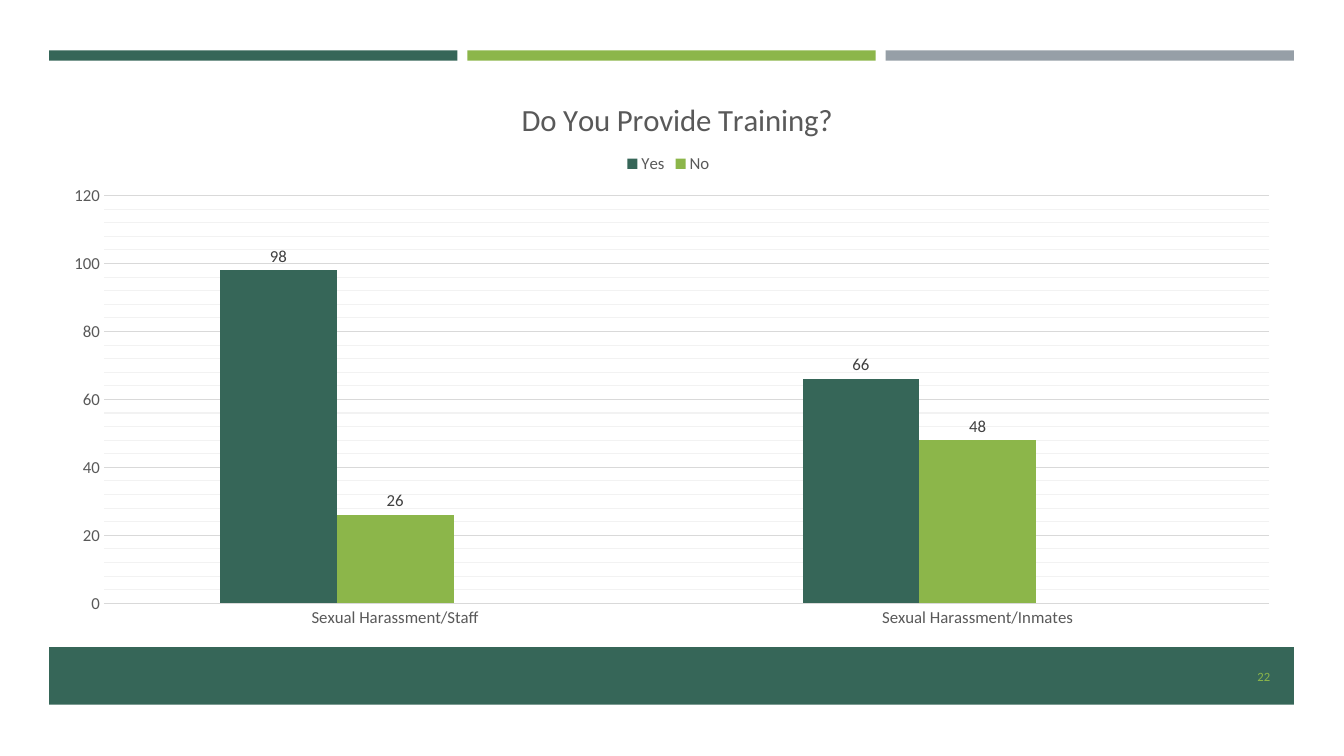
"""Build the training survey slide with its clustered column chart."""
import pptx
import pptx.chart.data
import pptx.dml.color
import pptx.enum.chart
import pptx.enum.shapes
import pptx.enum.text
import pptx.oxml
import pptx.oxml.ns
import pptx.util
from pptx.util import Cm, Pt

RGBColor = pptx.dml.color.RGBColor
PINE = RGBColor(0x36, 0x66, 0x58)
LIME = RGBColor(0x8C, 0xB6, 0x4A)
MINT = RGBColor(0x88, 0xD5, 0xA9)
STEEL = RGBColor(0x96, 0x9F, 0xA7)
TEXT = RGBColor(0x59, 0x59, 0x59)
DARK = RGBColor(0x40, 0x40, 0x40)
GRID = RGBColor(0xD9, 0xD9, 0xD9)
FAINT = RGBColor(0xF2, 0xF2, 0xF2)
FACE = "Calibri"
LEFT, WIDTH = 1.24, 31.37


def style(font, size, color):
    font.name, font.size, font.bold = FACE, Pt(size), False
    font.color.rgb = color


def place(item, after, target, **parts):
    for old in item.findall(pptx.oxml.ns.qn("c:layout")):
        item.remove(old)
    tags = "".join(f'<c:{key} val="{val}"/>' for key, val in parts.items())
    layout = pptx.oxml.parse_xml(
        f'<c:layout {pptx.oxml.ns.nsdecls("c")}><c:manualLayout>{target}'
        f'<c:xMode val="edge"/><c:yMode val="edge"/>{tags}</c:manualLayout></c:layout>')
    if after is None:
        item.insert(0, layout)
    else:
        after.addnext(layout)


deck = pptx.Presentation()
deck.slide_width, deck.slide_height = Cm(33.87), Cm(19.05)
slide = deck.slides.add_slide(deck.slide_layouts[6])

bars = [(LEFT + i * 10.54, 1.27, 10.29, 0.26, color)
        for i, color in enumerate((PINE, LIME, STEEL))]
bars.append((LEFT, 16.31, WIDTH, 1.45, PINE))
for x, y, wide, high, color in bars:
    bar = slide.shapes.add_shape(pptx.enum.shapes.MSO_SHAPE.RECTANGLE,
                                 Cm(x), Cm(y), Cm(wide), Cm(high))
    bar.shadow.inherit = False
    bar.fill.solid()
    bar.fill.fore_color.rgb = color
    bar.line.fill.background()

box = slide.shapes.add_textbox(Cm(29.34), Cm(16.54), Cm(2.92), Cm(1.02))
frame = box.text_frame
frame.word_wrap = True
frame.vertical_anchor = pptx.enum.text.MSO_ANCHOR.MIDDLE
frame.text = "22"
number = frame.paragraphs[0]
number.alignment = pptx.enum.text.PP_ALIGN.RIGHT
style(number.runs[0].font, 9, LIME)

data = pptx.chart.data.CategoryChartData()
data.categories = ["Sexual Harassment/Staff", "Sexual Harassment/Inmates"]
data.add_series("Yes", (98, 66))
data.add_series("No", (26, 48))
data.add_series("Series 3", (None, None))
chart = slide.shapes.add_chart(
    pptx.enum.chart.XL_CHART_TYPE.COLUMN_CLUSTERED,
    Cm(LEFT), Cm(1.68), Cm(WIDTH), Cm(14.45), data).chart
style(chart.font, 12, TEXT)

chart.has_title = True
title = chart.chart_title
title.text_frame.text = "Do You Provide Training?"
style(title.text_frame.paragraphs[0].runs[0].font, 22, TEXT)
place(title._element, title._element.find(pptx.oxml.ns.qn("c:tx")), "", x=0.375, y=0.045)

chart.has_legend = True
legend = chart.legend
legend.position = pptx.enum.chart.XL_LEGEND_POSITION.TOP
legend.include_in_layout = False
style(legend.font, 12, TEXT)
entry = pptx.oxml.parse_xml(
    f'<c:legendEntry {pptx.oxml.ns.nsdecls("c")}><c:idx val="2"/>'
    '<c:delete val="1"/></c:legendEntry>')
legend._element.find(pptx.oxml.ns.qn("c:legendPos")).addnext(entry)
place(legend._element, entry, "", x=0.46, y=0.145)

plot = chart.plots[0]
plot.gap_width, plot.overlap = 199, 0
plot.vary_by_categories = False
for series, color in zip(plot.series, (PINE, LIME, MINT)):
    series.format.fill.solid()
    series.format.fill.fore_color.rgb = color
    labels = series.data_labels
    labels.show_value = True
    labels.position = pptx.enum.chart.XL_LABEL_POSITION.OUTSIDE_END
    style(labels.font, 12, DARK)

cats, vals = chart.category_axis, chart.value_axis
for axis in (cats, vals):
    axis.major_tick_mark = axis.minor_tick_mark = pptx.enum.chart.XL_TICK_MARK.NONE
    style(axis.tick_labels.font, 12, TEXT)
vals.minimum_scale, vals.maximum_scale = 0, 120
vals.major_unit, vals.minor_unit = 20, 4
vals.has_major_gridlines = vals.has_minor_gridlines = True
vals.format.line.fill.background()
for line in (cats.format.line, vals.major_gridlines.format.line):
    line.color.rgb = GRID
    line.width = Pt(0.75)
minor = vals._element.find(pptx.oxml.ns.qn("c:minorGridlines"))
minor.append(pptx.oxml.parse_xml(
    f'<c:spPr {pptx.oxml.ns.nsdecls("c", "a")}><a:ln w="{Pt(0.75)}"><a:solidFill>'
    f'<a:srgbClr val="{FAINT}"/></a:solidFill></a:ln></c:spPr>'))
area = chart._chartSpace.chart.plotArea
place(area, None, '<c:layoutTarget val="inner"/>', x=0.044, y=0.225, w=0.936, h=0.711)

deck.save("out.pptx")
